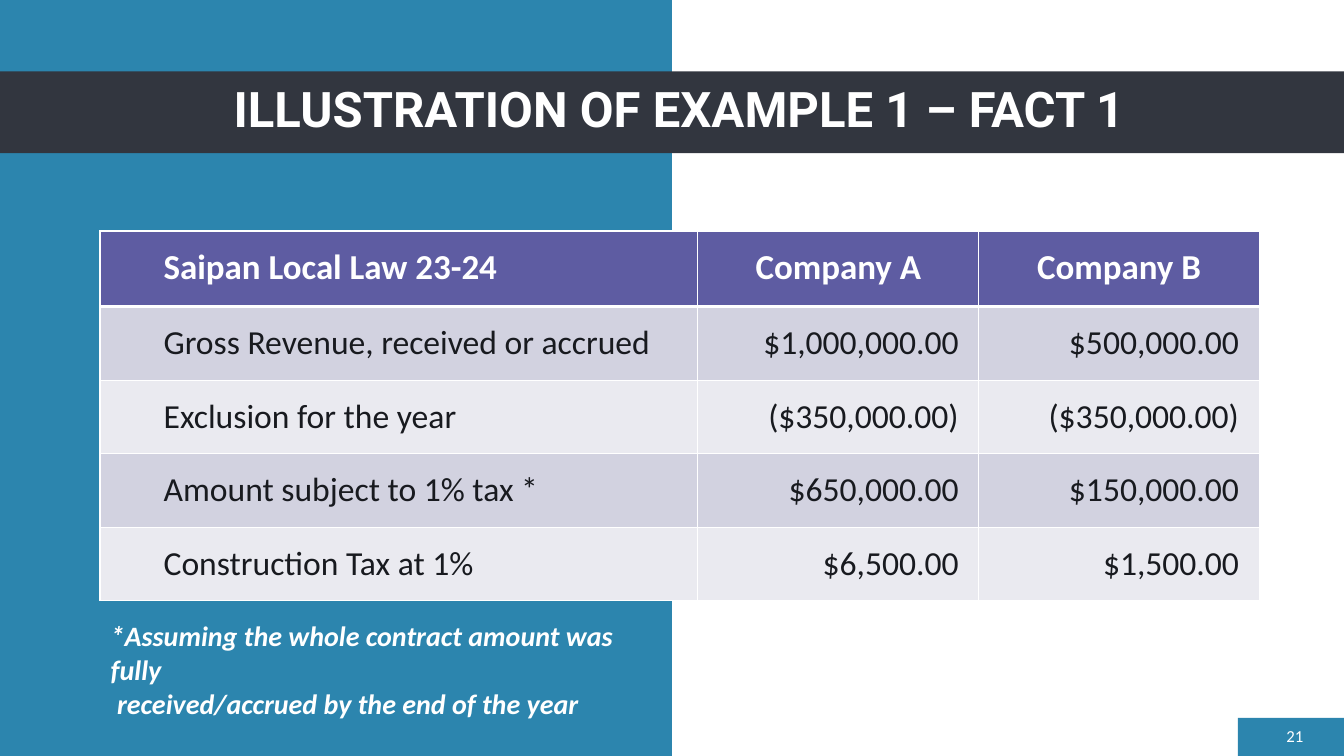
from lxml import etree
from pptx import Presentation
from pptx.dml.color import RGBColor
from pptx.enum.shapes import MSO_SHAPE as Shape
from pptx.enum.text import MSO_ANCHOR as Anchor, PP_ALIGN as Align
from pptx.oxml.ns import qn
from pptx.util import Pt

BLUE, DARK, WHITE, INK = "2C85AE", "32363F", "FFFFFF", "181A1F"
HEADER_FILL, BAND_FILLS = "5E5CA2", ("D2D2E0", "EAEAF0")

COLUMN_WIDTHS = (427, 200.75, 200.25)
HEADER_HEIGHT, ROW_HEIGHT = 54, 52.5
ROWS = (
    ("Saipan Local Law 23-24", "Company A", "Company B"),
    ("Gross Revenue, received or accrued", "$1,000,000.00", "$500,000.00"),
    ("Exclusion for the year", "($350,000.00)", "($350,000.00)"),
    ("Amount subject to 1% tax *", "$650,000.00", "$150,000.00"),
    ("Construction Tax at 1%", "$6,500.00", "$1,500.00"),
)


def color(hex_string):
    return RGBColor.from_string(hex_string)


def add_block(slide, left, top, width, height, fill):
    shape = slide.shapes.add_shape(
        Shape.RECTANGLE, Pt(left), Pt(top), Pt(width), Pt(height))
    shape.shadow.inherit = False
    shape.fill.solid()
    shape.fill.fore_color.rgb = color(fill)
    shape.line.fill.background()


def add_run(paragraph, text, size, text_color=WHITE, font="Calibri",
            bold=False, italic=False):
    run = paragraph.add_run()
    run.text = text
    run.font.name = font
    run.font.size = Pt(size)
    run.font.bold = bold
    run.font.italic = italic
    run.font.color.rgb = color(text_color)


def add_text_frame(slide, left, top, width, height, anchor=Anchor.MIDDLE):
    box = slide.shapes.add_textbox(Pt(left), Pt(top), Pt(width), Pt(height))
    frame = box.text_frame
    frame.word_wrap = True
    frame.vertical_anchor = anchor
    return frame


def add_title(slide, text):
    paragraph = add_text_frame(slide, 44, 50.5, 882.5, 58.5).paragraphs[0]
    paragraph.alignment = Align.CENTER
    paragraph.line_spacing = 0.9
    add_run(paragraph, text, 35, font="Roboto", bold=True)


def add_page_number(slide, text):
    paragraph = add_text_frame(slide, 722, 511, 216, 29).paragraphs[0]
    paragraph.alignment = Align.RIGHT
    paragraph.space_after = Pt(6)
    add_run(paragraph, text, 12)


def add_footnote(slide, first, second):
    frame = add_text_frame(slide, 72, 438.5, 402.5, 55.5, Anchor.TOP)
    add_run(frame.paragraphs[0], first, 20, bold=True, italic=True)
    # The second paragraph starts slightly indented
    paragraph = frame.add_paragraph()
    paragraph._p.get_or_add_pPr().set("indent", str(Pt(4.5)))
    add_run(paragraph, second, 20, bold=True, italic=True)


def set_borders(cell, bottom_width, top_width):
    properties = cell._tc.get_or_add_tcPr()
    widths = {"a:lnL": 1, "a:lnR": 1, "a:lnT": top_width, "a:lnB": bottom_width}
    for tag, width in widths.items():
        line = etree.SubElement(properties, qn(tag), w=str(Pt(width)))
        fill = etree.SubElement(line, qn("a:solidFill"))
        etree.SubElement(fill, qn("a:srgbClr"), val=WHITE)


def fill_cell(cell, text, row, column):
    is_header, is_label = row == 0, column == 0
    set_borders(cell, 3 if is_header else 1, 3 if row == 1 else 1)
    cell.fill.solid()
    cell.fill.fore_color.rgb = color(
        HEADER_FILL if is_header else BAND_FILLS[(row - 1) % 2])
    cell.vertical_anchor = Anchor.MIDDLE
    cell.margin_left = Pt(45.4 if is_label else 14.4)
    cell.margin_top = cell.margin_right = Pt(14.4)
    cell.margin_bottom = Pt(7.2)

    paragraph = cell.text_frame.paragraphs[0]
    paragraph.line_spacing = Pt(21.8)
    if is_label:
        paragraph.alignment = Align.LEFT
    else:
        paragraph.alignment = Align.CENTER if is_header else Align.RIGHT
    add_run(paragraph, text, 25 if is_header else 24,
            WHITE if is_header else INK, bold=is_header)


def add_tax_table(slide, left, top):
    heights = [HEADER_HEIGHT] + [ROW_HEIGHT] * (len(ROWS) - 1)
    table = slide.shapes.add_table(
        len(ROWS), len(COLUMN_WIDTHS), Pt(left), Pt(top),
        Pt(sum(COLUMN_WIDTHS)), Pt(sum(heights))).table
    for column, width in zip(table.columns, COLUMN_WIDTHS):
        column.width = Pt(width)
    for row, height in zip(table.rows, heights):
        row.height = Pt(height)
    for row, texts in enumerate(ROWS):
        for column, text in enumerate(texts):
            fill_cell(table.cell(row, column), text, row, column)


def main():
    presentation = Presentation()
    presentation.slide_width, presentation.slide_height = Pt(960), Pt(540)
    slide = presentation.slides.add_slide(presentation.slide_layouts[6])
    slide.background.fill.solid()
    slide.background.fill.fore_color.rgb = color(WHITE)

    # Left panel, page number corner and title band
    add_block(slide, 0, 0, 480, 540, BLUE)
    add_block(slide, 884.25, 512.75, 75.75, 27.25, BLUE)
    add_block(slide, 0, 51, 960, 58.5, DARK)

    # Title and page number
    add_title(slide, "ILLUSTRATION OF EXAMPLE 1 – FACT 1")
    add_page_number(slide, "21")

    # Tax comparison with its footnote
    add_tax_table(slide, 71.5, 165)
    add_footnote(slide, "*Assuming the whole contract amount was fully",
                 "received/accrued by the end of the year")

    presentation.save("out.pptx")


if __name__ == "__main__":
    main()
